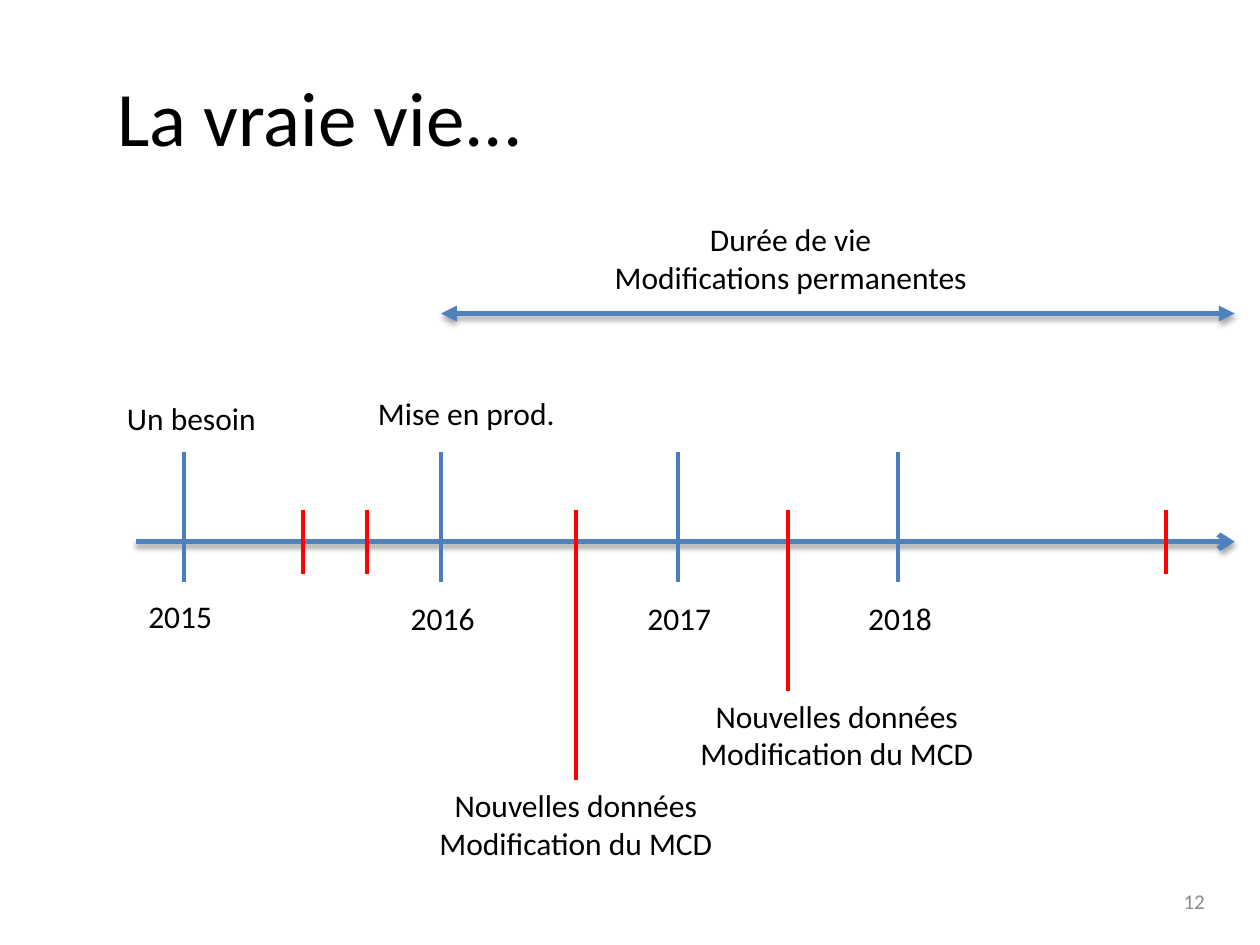
from lxml.etree import SubElement
from pptx import Presentation
from pptx.dml.color import RGBColor
from pptx.enum.shapes import MSO_CONNECTOR
from pptx.enum.text import MSO_ANCHOR, MSO_AUTO_SIZE, PP_ALIGN
from pptx.oxml.ns import qn
from pptx.util import Cm, Pt

BLACK = RGBColor(0x00, 0x00, 0x00)
GREY = RGBColor(0x8C, 0x8C, 0x8C)
ARROW_BLUE = RGBColor(0x4F, 0x81, 0xBD)
TICK_BLUE = RGBColor(0x4B, 0x7E, 0xBC)
RED = RGBColor(0xFF, 0x00, 0x00)

AXIS_LEFT, AXIS_RIGHT, AXIS_Y = 2.74, 24.89, 10.92
LIFE_Y = 6.32
YEAR_TOP, YEAR_BOTTOM = 9.12, 11.73
CHANGE_TOP, CHANGE_BOTTOM = 10.29, 11.58
LINE_H, TWO_LINES_H = 1.02, 1.8

# year, tick x, label left, label top
YEARS = [
    ("2015", 3.71, 2.74, 11.91),
    ("2016", 8.89, 8.03, 11.96),
    ("2017", 13.67, 12.8, 11.96),
    ("2018", 18.11, 17.25, 11.96),
]
SMALL_CHANGES = [6.1, 7.39, 23.5]
# mark x, mark bottom, note left
MODEL_CHANGES = [(11.61, 15.72, 8.56), (15.88, 13.92, 13.82)]


def add_text(s, paragraphs, left, top, width, height, size=18, color=BLACK,
             align=PP_ALIGN.LEFT, anchor=MSO_ANCHOR.TOP, wrap=False):
    """Add a text box; each paragraph is a list of lines."""
    tf = s.shapes.add_textbox(Cm(left), Cm(top), Cm(width), Cm(height)).text_frame
    tf.word_wrap = wrap
    tf.auto_size = MSO_AUTO_SIZE.NONE if wrap else MSO_AUTO_SIZE.SHAPE_TO_FIT_TEXT
    tf.vertical_anchor = anchor
    for i, lines in enumerate(paragraphs):
        p = tf.add_paragraph() if i else tf.paragraphs[0]
        p.alignment = align
        for j, line in enumerate(lines):
            if j:
                p.add_line_break()
            r = p.add_run()
            r.text = line
            r.font.name = "Calibri"
            r.font.size = Pt(size)
            r.font.color.rgb = color


def add_line(s, x1, y1, x2, y2, color, width):
    line = s.shapes.add_connector(MSO_CONNECTOR.STRAIGHT, Cm(x1), Cm(y1), Cm(x2), Cm(y2))
    line.line.color.rgb = color
    line.line.width = Pt(width)
    effects = SubElement(line._element.spPr, qn("a:effectLst"))
    return line, effects


def add_tick(s, x, top, bottom, color):
    add_line(s, x, top, x, bottom, color, 2.25)


def add_arrow(s, left, right, y, **ends):
    """Add a shadowed horizontal arrow; ends maps headEnd and tailEnd to a type."""
    line, effects = add_line(s, left, y, right, y, ARROW_BLUE, 3)
    ln = line.line._get_or_add_ln()
    for end, kind in ends.items():
        SubElement(ln, qn(f"a:{end}"), type=kind)
    shadow = SubElement(effects, qn("a:outerShdw"), blurRad="40000", dist="23000",
                        dir="5400000", rotWithShape="0")
    shadow_color = SubElement(shadow, qn("a:srgbClr"), val="000000")
    SubElement(shadow_color, qn("a:alpha"), val="35000")


def add_timeline(s):
    add_arrow(s, AXIS_LEFT, AXIS_RIGHT, AXIS_Y, tailEnd="arrow")
    for year, x, left, top in YEARS:
        add_tick(s, x, YEAR_TOP, YEAR_BOTTOM, TICK_BLUE)
        add_text(s, [[year]], left, top, 1.8, LINE_H)
    add_text(s, [["Un besoin"]], 2.31, 7.92, 3.15, LINE_H)
    add_text(s, [["Mise en prod."]], 7.37, 7.82, 4.11, LINE_H)


def add_changes(s):
    for x in SMALL_CHANGES:
        add_tick(s, x, CHANGE_TOP, CHANGE_BOTTOM, RED)
    for x, bottom, left in MODEL_CHANGES:
        add_tick(s, x, CHANGE_TOP, bottom, RED)
        add_text(s, [["Nouvelles données"], ["Modification du MCD"]],
                 left, bottom, 6.1, TWO_LINES_H, align=PP_ALIGN.CENTER)


def add_lifetime(s):
    add_arrow(s, YEARS[1][1], AXIS_RIGHT, LIFE_Y, headEnd="triangle", tailEnd="triangle")
    add_text(s, [["Durée de vie", "Modifications permanentes"]],
             12.09, 4.32, 7.7, TWO_LINES_H, align=PP_ALIGN.CENTER)


def main():
    prs = Presentation()
    prs.slide_width, prs.slide_height = Cm(25.4), Cm(19.05)
    s = prs.slides.add_slide(prs.slide_layouts[6])
    add_text(s, [["La vraie vie..."]], 2.11, 0.74, 22.43, 3.18, size=44,
             anchor=MSO_ANCHOR.MIDDLE, wrap=True)
    add_timeline(s)
    add_changes(s)
    add_lifetime(s)
    add_text(s, [["12"]], 18.62, 17.65, 5.92, LINE_H, size=12, color=GREY,
             align=PP_ALIGN.RIGHT, anchor=MSO_ANCHOR.MIDDLE, wrap=True)
    prs.save("out.pptx")


if __name__ == "__main__":
    main()
